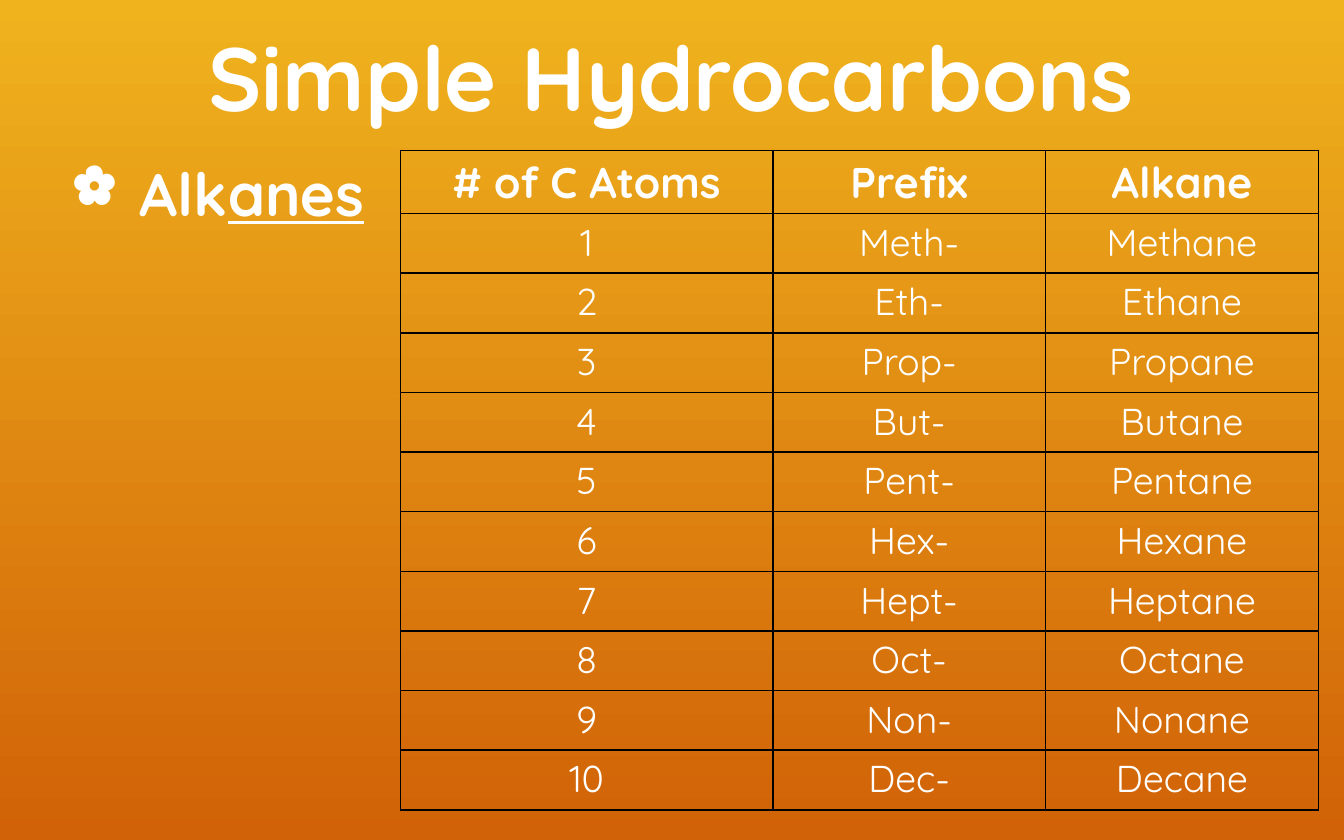
from dataclasses import dataclass

from lxml.etree import SubElement
from pptx import Presentation
from pptx.dml.color import RGBColor
from pptx.enum.text import MSO_ANCHOR as Anchor, PP_ALIGN as Align
from pptx.oxml.ns import qn
from pptx.util import Inches, Pt

WHITE = RGBColor(0xFF, 0xFF, 0xFF)
BLACK = RGBColor(0x00, 0x00, 0x00)
GOLD = RGBColor(0xF0, 0xB3, 0x1E)
RUST = RGBColor(0xD1, 0x62, 0x07)
FONT = "Quicksand"
W, H = Inches(10), Inches(6.25)
HEADER = ("# of C Atoms", "Prefix", "Alkane")
PREFIXES = ("Meth", "Eth", "Prop", "But", "Pent", "Hex", "Hept", "Oct", "Non", "Dec")
COLUMNS = (0.277, 0.203, 0.203)
HEADER_HEIGHT, ROW_HEIGHT = 0.47 / 6.25, 0.444 / 6.25


@dataclass(frozen=True)
class Box:
    left: float
    top: float
    width: float
    height: float

    def place(self) -> tuple[int, int, int, int]:
        return (int(self.left * W), int(self.top * H),
                int(self.width * W), int(self.height * H))


TITLE = Box(0.085, 0.013, 0.829, 0.166)
BODY = Box(0.044, 0.179, 0.919, 0.68)
TABLE = Box(0.298, 0.179, sum(COLUMNS), HEADER_HEIGHT + len(PREFIXES) * ROW_HEIGHT)


def add_text(p, text: str, *, size: float, bold: bool = False, underline: bool = False) -> None:
    r = p.add_run()
    r.text = text
    r.font.name = FONT
    r.font.size = Pt(size)
    r.font.bold = bold
    r.font.underline = underline
    r.font.color.rgb = WHITE


def add_box(s, box: Box, anchor: Anchor):
    tf = s.shapes.add_textbox(*box.place()).text_frame
    tf.word_wrap = True
    tf.vertical_anchor = anchor
    return tf.paragraphs[0]


def set_bullet(p, char: str, indent: float, percent: int) -> None:
    pPr = p._p.get_or_add_pPr()
    pPr.set("marL", str(Inches(indent)))
    pPr.set("indent", str(-Inches(indent)))
    SubElement(pPr, qn("a:buSzPct"), val=str(percent * 1000))
    SubElement(pPr, qn("a:buChar"), char=char)


def set_borders(cell, color: RGBColor, width: float) -> None:
    tcPr = cell._tc.get_or_add_tcPr()
    for side in ("lnL", "lnR", "lnT", "lnB"):
        ln = SubElement(tcPr, qn(f"a:{side}"), w=str(Pt(width)))
        fill = SubElement(ln, qn("a:solidFill"))
        SubElement(fill, qn("a:srgbClr"), val=str(color))


def add_alkane_table(s) -> None:
    rows = [HEADER] + [(str(n), f"{prefix}-", f"{prefix}ane")
                       for n, prefix in enumerate(PREFIXES, 1)]
    table = s.shapes.add_table(len(rows), len(HEADER), *TABLE.place()).table
    table.first_row = table.horz_banding = False
    for column, share in zip(table.columns, COLUMNS):
        column.width = int(share * W)
    for i, values in enumerate(rows):
        is_header = i == 0
        table.rows[i].height = int((HEADER_HEIGHT if is_header else ROW_HEIGHT) * H)
        for j, value in enumerate(values):
            cell = table.cell(i, j)
            cell.margin_left = cell.margin_right = Inches(0.1)
            cell.margin_top = cell.margin_bottom = Inches(0.04)
            set_borders(cell, BLACK, 1)
            cell.fill.background()
            p = cell.text_frame.paragraphs[0]
            p.alignment = Align.CENTER
            add_text(p, value, size=23 if is_header else 20, bold=is_header)


def set_background(s) -> None:
    fill = s.background.fill
    fill.gradient()
    fill.gradient_angle = 270
    for stop, position, color in zip(fill.gradient_stops, (0, 1), (GOLD, RUST)):
        stop.position = position
        stop.color.rgb = color


def main() -> None:
    prs = Presentation()
    prs.slide_width, prs.slide_height = W, H
    s = prs.slides.add_slide(prs.slide_layouts[6])
    set_background(s)

    p = add_box(s, TITLE, Anchor.MIDDLE)
    p.alignment = Align.CENTER
    p.line_spacing = 0.95
    add_text(p, "Simple Hydrocarbons", size=48, bold=True)

    p = add_box(s, BODY, Anchor.TOP)
    set_bullet(p, "✿", 0.5, 90)
    add_text(p, "Alk", size=32, bold=True)
    add_text(p, "anes", size=32, bold=True, underline=True)

    add_alkane_table(s)
    prs.save("out.pptx")


if __name__ == "__main__":
    main()
